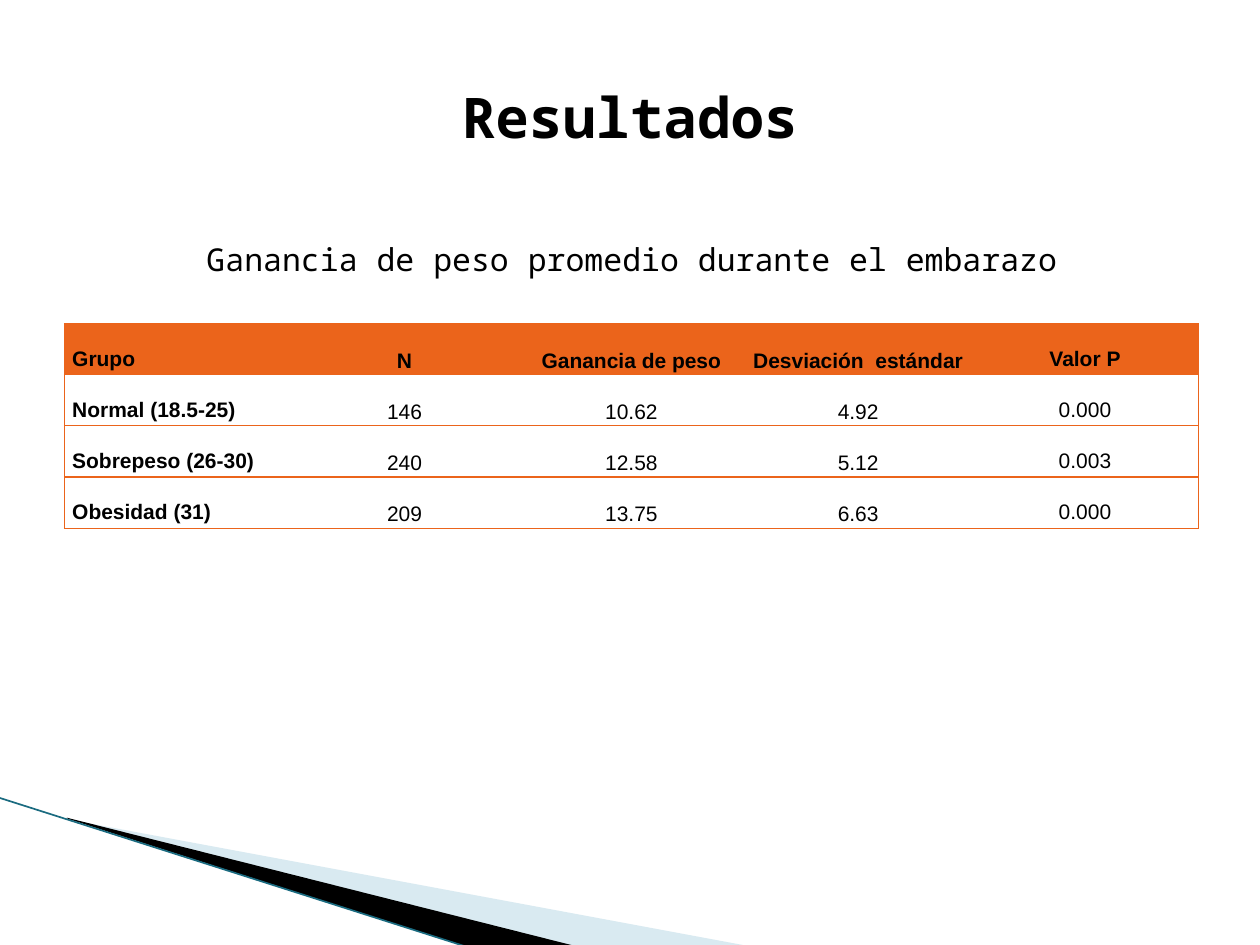
from dataclasses import dataclass

from pptx import Presentation
from pptx.dml.color import RGBColor
from pptx.enum.shapes import MSO_CONNECTOR
from pptx.enum.text import MSO_ANCHOR, MSO_AUTO_SIZE, PP_ALIGN
from pptx.oxml.ns import qn
from pptx.util import Pt
from lxml.etree import SubElement


@dataclass(frozen=True)
class Theme:
    ink: str = "000000"
    accent: str = "EB641B"
    wedge: str = "A0CBDC"
    edge: str = "1A6B80"
    heading_font: str = "Noto Sans Mono"
    table_font: str = "Arial"
    title_size: float = 32
    subtitle_size: float = 18
    table_size: float = 12
    border_width: float = 0.75


THEME = Theme()

ROWS = [
    ["Grupo", "N", "Ganancia de peso", "Desviación  estándar", "Valor P"],
    ["Normal (18.5-25)", "146", "10.62", "4.92", "0.000"],
    ["Sobrepeso (26-30)", "240", "12.58", "5.12", "0.003"],
    ["Obesidad (31)", "209", "13.75", "6.63", "0.000"],
]


def rgb(color):
    return RGBColor.from_string(color)


def apply(target, values):
    for name, value in values.items():
        setattr(target, name, value)


def write(frame, text, font, alignment=PP_ALIGN.LEFT, line_spacing=None):
    para = frame.paragraphs[0]
    apply(para, {"alignment": alignment, "line_spacing": line_spacing})
    span = para.add_run()
    span.text = text
    apply(span.font, font)
    span.font.color.rgb = rgb(THEME.ink)


def add_title(page, text):
    title = page.shapes.title
    apply(title, {"left": Pt(36), "top": Pt(21.6), "width": Pt(648), "height": Pt(90)})
    title.text_frame.vertical_anchor = MSO_ANCHOR.MIDDLE
    font = {"name": THEME.heading_font, "size": Pt(THEME.title_size), "bold": True}
    write(title.text_frame, text, font, PP_ALIGN.CENTER)


def add_subtitle(page, text):
    box = page.shapes.add_textbox(Pt(110.9), Pt(133.9), Pt(635), Pt(28.8))
    apply(box.text_frame, {"word_wrap": True, "auto_size": MSO_AUTO_SIZE.SHAPE_TO_FIT_TEXT})
    write(box.text_frame, text,
          {"name": THEME.heading_font, "size": Pt(THEME.subtitle_size)})


def add_wedge(page, points, color, opacity=100):
    corners = [(Pt(x), Pt(y)) for x, y in points]
    builder = page.shapes.build_freeform(*corners[0], scale=1.0)
    builder.add_line_segments(corners[1:], close=True)
    wedge = builder.convert_to_shape()
    wedge.shadow.inherit = False
    wedge.line.fill.background()
    wedge.fill.solid()
    wedge.fill.fore_color.rgb = rgb(color)
    if opacity < 100:
        tint = wedge.fill._xPr.find(qn("a:solidFill"))[0]
        SubElement(tint, qn("a:alpha"), val=str(opacity * 1000))


def add_edge(page, start, end):
    edge = page.shapes.add_connector(
        MSO_CONNECTOR.STRAIGHT, *(Pt(value) for value in start + end))
    edge.line.color.rgb = rgb(THEME.edge)
    edge.line.width = Pt(0.95)
    SubElement(edge._element.spPr, qn("a:effectLst"))


def set_borders(cell, visible_sides):
    properties = cell._tc.get_or_add_tcPr()
    for side in "LRTB":
        border = SubElement(properties, qn(f"a:ln{side}"), w=str(Pt(THEME.border_width)))
        if side in visible_sides:
            paint = SubElement(border, qn("a:solidFill"))
            SubElement(paint, qn("a:srgbClr"), val=THEME.accent)
        else:
            SubElement(border, qn("a:noFill"))


def add_results_table(page):
    last = len(ROWS[0]) - 1
    column_width, row_height = 129.6, 29.2
    table = page.shapes.add_table(
        len(ROWS), last + 1, Pt(36.8), Pt(185),
        Pt(column_width * (last + 1)), Pt(row_height * len(ROWS))).table
    apply(table, {"first_row": False, "horz_banding": False})
    for column in table.columns:
        column.width = Pt(column_width)
    for row_index, values in enumerate(ROWS):
        table.rows[row_index].height = Pt(row_height)
        for column_index, text in enumerate(values):
            cell = table.cell(row_index, column_index)
            outer = column_index in (0, last)
            apply(cell, {
                "margin_left": Pt(4.5), "margin_right": Pt(4.5),
                "margin_top": 0, "margin_bottom": 0,
                "vertical_anchor": MSO_ANCHOR.TOP if outer else MSO_ANCHOR.MIDDLE,
            })
            set_borders(cell, "TB" + {0: "L", last: "R"}.get(column_index, ""))
            if row_index == 0:
                cell.fill.solid()
                cell.fill.fore_color.rgb = rgb(THEME.accent)
            else:
                cell.fill.background()
            font = {"name": THEME.table_font, "size": Pt(THEME.table_size),
                    "bold": row_index == 0 or column_index == 0}
            alignment = PP_ALIGN.CENTER if column_index else PP_ALIGN.LEFT
            write(cell.text_frame, text, font, alignment, line_spacing=2.0)


def main():
    deck = Presentation()
    apply(deck, {"slide_width": Pt(720), "slide_height": Pt(540)})
    page = deck.slides.add_slide(deck.slide_layouts[5])

    # Corner decoration
    add_wedge(page, [(39.6, 468.4), (428.4, 540.7), (328.3, 540.7), (39.6, 468)],
              THEME.wedge, opacity=40)
    add_wedge(page, [(38.2, 467.3), (329, 540.7), (267.8, 541.4), (38.9, 468)], THEME.ink)
    add_edge(page, (-0.7, 455.8), (267.8, 541.4))

    # Results
    add_results_table(page)

    # Headings
    add_title(page, "Resultados")
    add_subtitle(page, "Ganancia de peso promedio durante el embarazo")

    deck.save("out.pptx")


if __name__ == "__main__":
    main()
